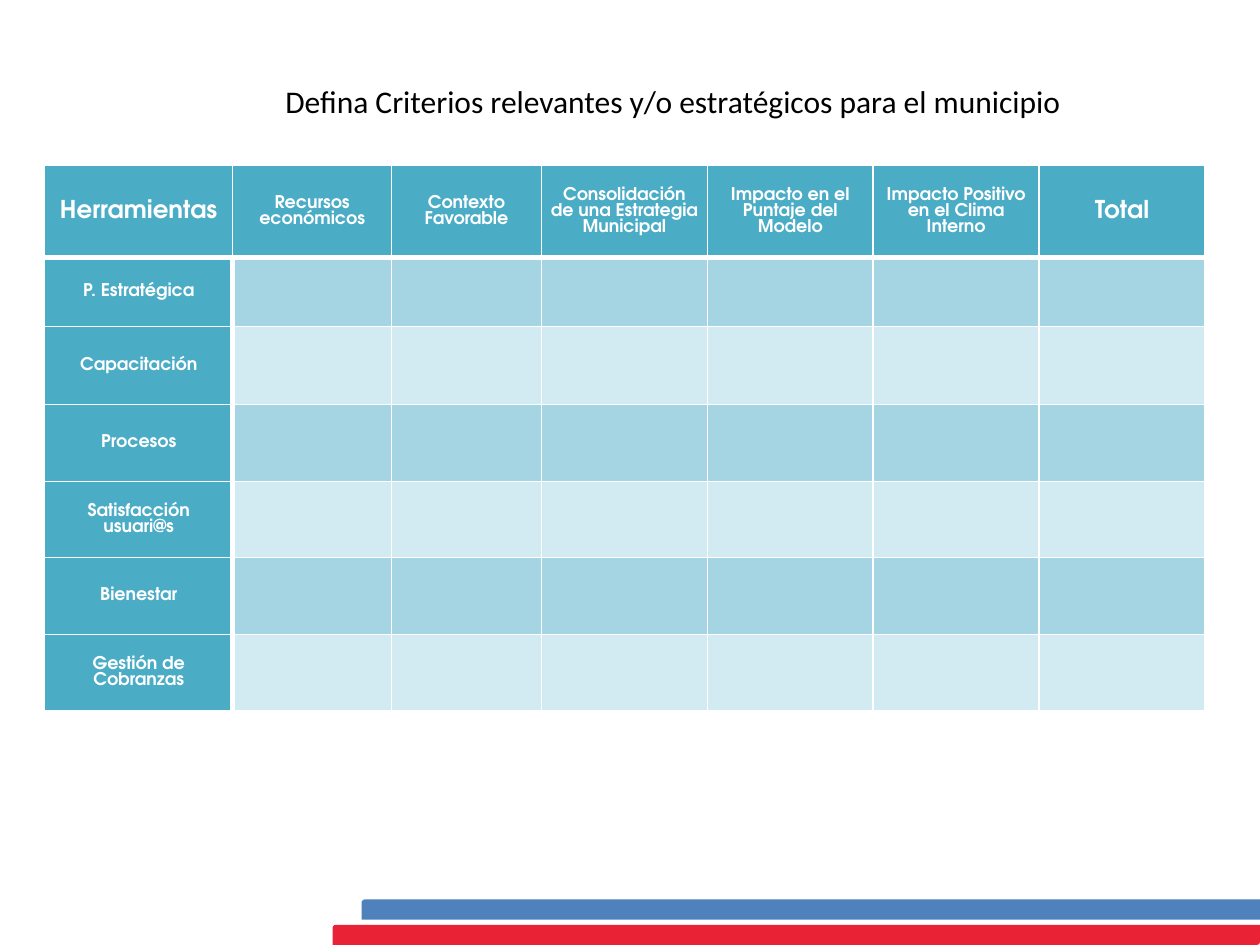
from pptx import Presentation
from pptx.dml.color import RGBColor
from pptx.enum.shapes import MSO_SHAPE
from pptx.enum.text import MSO_ANCHOR, PP_ALIGN
from pptx.oxml import parse_xml
from pptx.oxml.ns import nsdecls
from pptx.util import Pt

BLACK = RGBColor(0x00, 0x00, 0x00)
WHITE = RGBColor(0xFF, 0xFF, 0xFF)
BLUE = RGBColor(0x4F, 0x81, 0xBD)
RED = RGBColor(0xEA, 0x22, 0x35)
TEAL = RGBColor(0x4B, 0xAC, 0xC6)
MID_TEAL = RGBColor(0xA5, 0xD5, 0xE2)
PALE_TEAL = RGBColor(0xD2, 0xEA, 0xF1)

HEADERS = ["Herramientas", "Recursos económicos", "Contexto Favorable",
           "Consolidación de una Estrategia Municipal",
           "Impacto en el Puntaje del Modelo",
           "Impacto Positivo en el Clima Interno", "Total"]
TOOLS = ["P. Estratégica", "Capacitación", "Procesos",
         "Satisfacción usuari@s", "Bienestar", "Gestión de Cobranzas"]
COL_WIDTHS = [107.5, 90.7, 85.7] + [94.8] * 4
ROW_HEIGHTS = [52.4, 39.6, 44.5, 44, 43.5, 44, 43.7]


def add_text(tf, text, size, font="TeX Gyre Adventor", color=WHITE,
             bold=False, align=None):
    p = tf.paragraphs[0]
    p.alignment = align
    r = p.add_run()
    r.text = text
    r.font.size = Pt(size)
    r.font.name = font
    r.font.bold = bold
    r.font.color.rgb = color


def set_borders(cell, **widths):
    """Draw white borders; widths are in points, keyed L, R, T and B."""
    tc_pr = cell._tc.get_or_add_tcPr()
    for side, width in widths.items():
        tc_pr.append(parse_xml(
            f'<a:ln{side} {nsdecls("a")} w="{Pt(width)}"><a:solidFill>'
            f'<a:srgbClr val="{WHITE}"/></a:solidFill></a:ln{side}>'))


prs = Presentation()
prs.slide_width, prs.slide_height = Pt(720), Pt(540)
s = prs.slides.add_slide(prs.slide_layouts[6])

# Footer bars
for left, top, color in [(206.6, 514, BLUE), (190, 528.5, RED)]:
    sp = s.shapes.add_shape(MSO_SHAPE.ROUND_2_DIAG_RECTANGLE,
                            Pt(left), Pt(top), Pt(530), Pt(11.5))
    sp.shadow.inherit = False
    sp.fill.solid()
    sp.fill.fore_color.rgb = color
    sp.line.fill.background()

# Criteria table
table = s.shapes.add_table(len(ROW_HEIGHTS), len(COL_WIDTHS), Pt(25.5), Pt(94.6),
                           Pt(sum(COL_WIDTHS)), Pt(sum(ROW_HEIGHTS))).table
table.first_col = True
for column, width in zip(table.columns, COL_WIDTHS):
    column.width = Pt(width)
for row, height in zip(table.rows, ROW_HEIGHTS):
    row.height = Pt(height)

for i, row in enumerate(table.rows):
    for j, cell in enumerate(row.cells):
        set_borders(cell,
                    L=3 if i > 0 and j == 1 else 1,
                    R=3 if i > 0 and j == 0 else 1,
                    T=3 if i == 1 else 1,
                    B=3 if i == 0 else 1)
        is_label = i == 0 or j == 0
        cell.fill.solid()
        cell.fill.fore_color.rgb = TEAL if is_label else MID_TEAL if i % 2 else PALE_TEAL
        if is_label:
            text = HEADERS[j] if i == 0 else TOOLS[i - 1]
            cell.vertical_anchor = MSO_ANCHOR.MIDDLE
            cell.margin_left = cell.margin_right = Pt(5)
            cell.margin_top = cell.margin_bottom = 0
            add_text(cell.text_frame, text, bold=True, align=PP_ALIGN.CENTER,
                     size=14 if text in ("Herramientas", "Total") else 10)

# Heading
tf = s.shapes.add_textbox(Pt(156), Pt(43.5), Pt(463), Pt(29)).text_frame
tf.word_wrap = False
add_text(tf, "Defina Criterios relevantes y/o estratégicos para el municipio",
         size=18, font="Calibri", color=BLACK)

prs.save("out.pptx")
